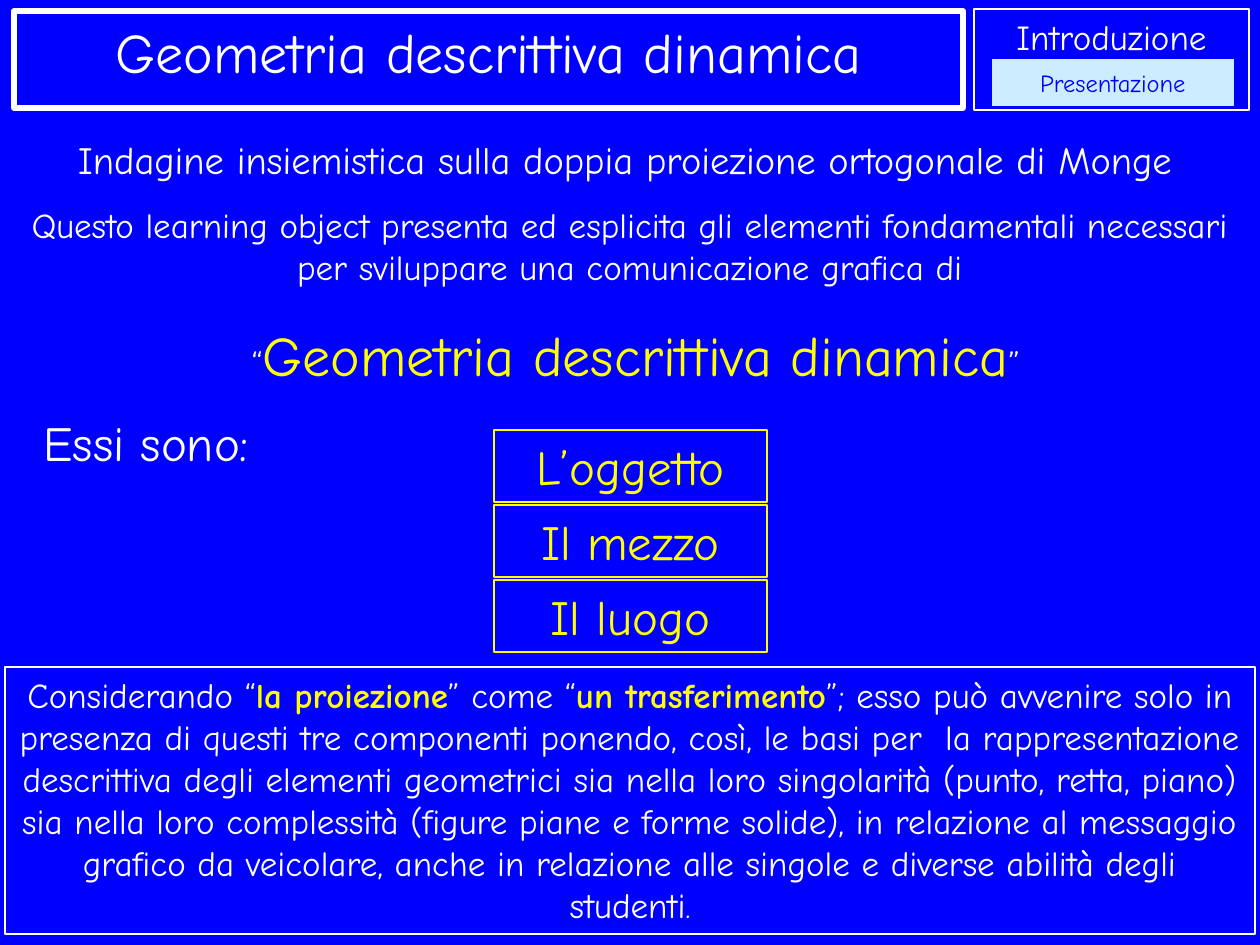
"""Build the introductory slide on dynamic descriptive geometry."""
from pptx import Presentation
from pptx.dml.color import RGBColor
from pptx.enum.shapes import MSO_SHAPE as Preset
from pptx.enum.text import MSO_ANCHOR as Anchor, MSO_AUTO_SIZE as AutoSize, PP_ALIGN as Align
from pptx.util import Emu, Pt

PX = 914400 / 126
FONT = "Comic Neue"
BLUE, WHITE, YELLOW, PALE = "0000FF", "FFFFFF", "FFFF00", "CCECFF"


def color(value):
    return RGBColor.from_string(value)


def style(shape, box, paragraphs, line=None, width=0.75, fill=None, anchor=Anchor.TOP):
    shape.left, shape.top, shape.width, shape.height = [Emu(round(n * PX)) for n in box]
    if fill:
        shape.fill.solid()
        shape.fill.fore_color.rgb = color(fill)
    else:
        shape.fill.background()
    if line:
        shape.line.color.rgb = color(line)
        shape.line.width = Pt(width)
    else:
        shape.line.fill.background()
    frame = shape.text_frame
    frame.word_wrap = True
    frame.auto_size = AutoSize.NONE
    frame.vertical_anchor = anchor
    frame.text = "\n" * (len(paragraphs) - 1)
    for paragraph, runs in zip(frame.paragraphs, paragraphs):
        paragraph.alignment = Align.CENTER
        for text, size, ink, bold in runs:
            run = paragraph.add_run()
            run.text = text
            run.font.name = FONT
            run.font.size = Pt(size)
            run.font.bold = bold
            run.font.color.rgb = color(ink)


presentation = Presentation()
presentation.slide_width = Emu(round(1260 * PX))
presentation.slide_height = Emu(round(945 * PX))
slide = presentation.slides.add_slide(presentation.slide_layouts[5])
slide.background.fill.solid()
slide.background.fill.fore_color.rgb = color(BLUE)

style(slide.shapes.title, (974, 9, 275, 101),
      [[("Introduzione", 20, WHITE, False)]], line=WHITE)

button = slide.shapes.add_shape(Preset.ACTION_BUTTON_CUSTOM, 0, 0, 0, 0)
button.shadow.inherit = False
style(button, (992, 59, 242, 47), [[("Presentazione", 14, BLUE, False)]],
      fill=PALE, anchor=Anchor.MIDDLE)

heading = slide.shapes.add_shape(Preset.RECTANGLE, 0, 0, 0, 0)
heading.shadow.inherit = False
style(heading, (14, 11, 949, 97),
      [[("Geometria descrittiva dinamica", 32, WHITE, False)]], line=WHITE, width=3)

subtitle = slide.shapes.add_textbox(0, 0, 0, 0)
style(subtitle, (0, 130, 1250, 59), [[(
    "Indagine insiemistica sulla doppia proiezione ortogonale di Monge",
    22, WHITE, False)]])

purpose = slide.shapes.add_textbox(0, 0, 0, 0)
style(purpose, (5, 197, 1250, 199), [
    [("Questo learning object presenta ed esplicita gli elementi fondamentali "
      "necessari per sviluppare una comunicazione grafica di", 20, WHITE, False)],
    [(" “", 20, WHITE, False),
     ("Geometria descrittiva dinamica", 32, YELLOW, False),
     ("”", 20, WHITE, False)],
])
purpose.text_frame.paragraphs[1].space_before = Pt(19)

lead_in = slide.shapes.add_textbox(0, 0, 0, 0)
style(lead_in, (5, 406, 282, 72), [[("Essi sono:", 28, WHITE, False)]])

for index, element in enumerate(("L’oggetto", "Il mezzo", "Il luogo")):
    element_box = slide.shapes.add_shape(Preset.RECTANGLE, 0, 0, 0, 0)
    element_box.shadow.inherit = False
    style(element_box, (494, 430 + 75 * index, 273, 72),
          [[(element, 28, YELLOW, False)]], line=YELLOW)

conclusion = slide.shapes.add_shape(Preset.RECTANGLE, 0, 0, 0, 0)
conclusion.shadow.inherit = False
style(conclusion, (5, 667, 1250, 267), [[
    ("Considerando “", 20, WHITE, False),
    ("la proiezione", 20, YELLOW, True),
    ("” come “", 20, WHITE, False),
    ("un trasferimento", 20, YELLOW, True),
    ("”; esso può avvenire solo in presenza di questi tre componenti ponendo, "
     "così, le basi per  la rappresentazione descrittiva degli elementi geometrici "
     "sia nella loro singolarità (punto, retta, piano) sia nella loro complessità "
     "(figure piane e forme solide), in relazione al messaggio grafico da veicolare, "
     "anche in relazione alle singole e diverse abilità degli studenti",
     20, WHITE, False),
    (".", 18, WHITE, False),
]], line=WHITE)

presentation.save("out.pptx")
